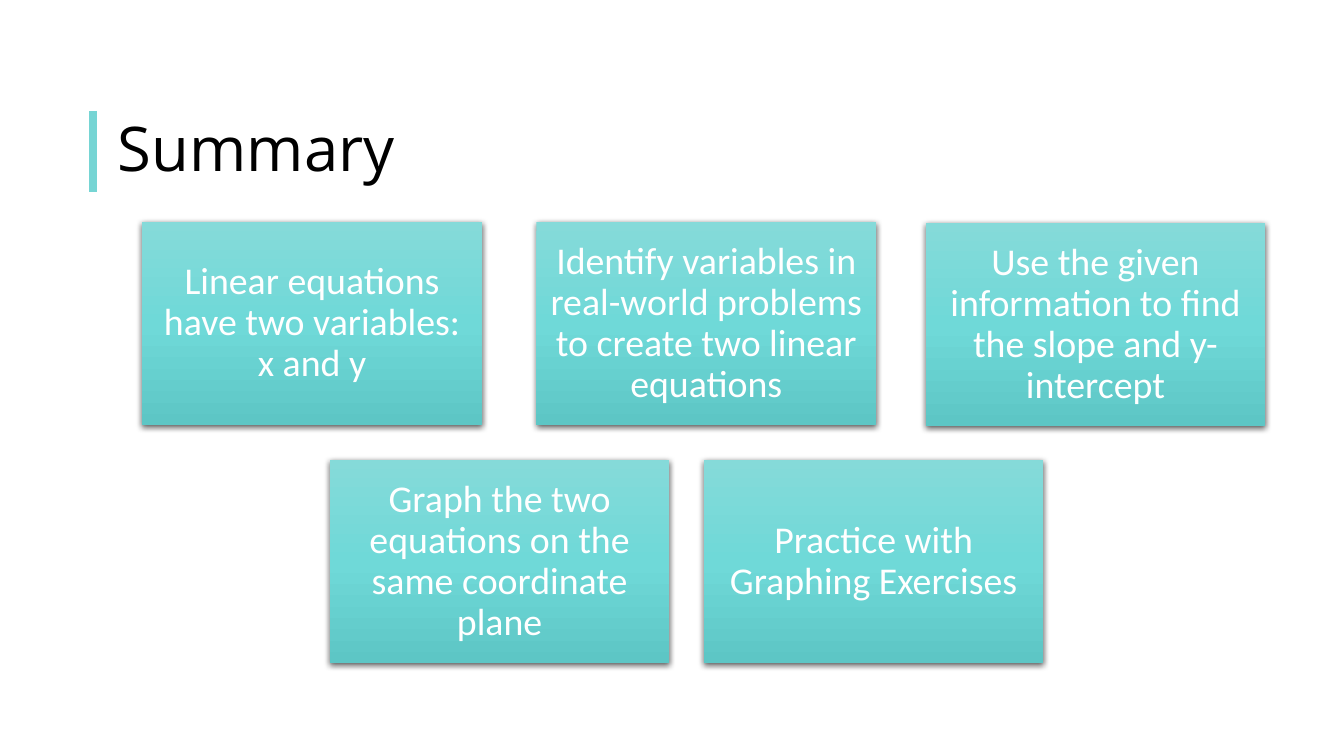
from typing import NamedTuple

from pptx import Presentation
from pptx.dml.color import RGBColor
from pptx.enum.shapes import MSO_CONNECTOR as Link, MSO_SHAPE as Kind
from pptx.enum.text import MSO_ANCHOR as Anchor, MSO_AUTO_SIZE as Fit, PP_ALIGN as Align
from pptx.oxml import parse_xml
from pptx.oxml.ns import nsdecls, qn
from pptx.slide import Slide
from pptx.text.text import Font
from pptx.util import Inches, Pt

TEAL = "76D5D4"
WHITE = "FFFFFF"
BLACK = "000000"
STOPS = {0: "85DAD9", 50: "6FD9D8", 100: "5DC6C5"}
CARD_W, CARD_H = 3.37, 2.02
INSET = 0.11


class Card(NamedTuple):
    left: float
    top: float
    text: str


CARDS = [
    Card(1.41, 2.2, "Linear equations have two variables: x and y"),
    Card(5.32, 2.2, "Identify variables in real-world problems to create two linear equations"),
    Card(9.18, 2.21, "Use the given information to find the slope and y-intercept"),
    Card(3.27, 4.56, "Graph the two equations on the same coordinate plane"),
    Card(6.98, 4.56, "Practice with Graphing Exercises"),
]


def color(code: str) -> RGBColor:
    return RGBColor.from_string(code)


def style(font: Font, name: str, size: float, code: str) -> None:
    font.name = name
    font.size = Pt(size)
    font.color.rgb = color(code)


def add_title(slide: Slide, text: str) -> None:
    title = slide.shapes.title
    title.left, title.top = Inches(1.07), Inches(1.1)
    title.width, title.height = Inches(11.5), Inches(0.8)
    frame = title.text_frame
    frame.text = text
    frame.auto_size = Fit.NONE
    frame.vertical_anchor = Anchor.MIDDLE
    para = frame.paragraphs[0]
    para.alignment = Align.LEFT
    para.line_spacing = 0.9
    style(para.font, "Open Sans", 44, BLACK)


def add_bar(slide: Slide) -> None:
    bar = slide.shapes.add_connector(
        Link.STRAIGHT, Inches(0.92), Inches(1.1), Inches(0.92), Inches(1.9))
    bar.line.color.rgb = color(TEAL)
    bar.line.width = Pt(6)
    bar._element.spPr.append(parse_xml(f"<a:effectLst {nsdecls('a')}/>"))


def add_card(slide: Slide, card: Card) -> None:
    shape = slide.shapes.add_shape(
        Kind.RECTANGLE, Inches(card.left), Inches(card.top), Inches(CARD_W), Inches(CARD_H))
    shape.line.fill.background()
    shape.fill.gradient()
    shape.fill.gradient_angle = 270
    props = shape._element.spPr
    grad = props.find(qn("a:gradFill"))
    stops = "".join(
        f'<a:gs pos="{pos * 1000}"><a:srgbClr val="{code}"/></a:gs>'
        for pos, code in STOPS.items())
    grad.replace(grad.find(qn("a:gsLst")),
                 parse_xml(f"<a:gsLst {nsdecls('a')}>{stops}</a:gsLst>"))

    shape.shadow.inherit = False
    props.find(qn("a:effectLst")).append(parse_xml(
        f'<a:outerShdw {nsdecls("a")} blurRad="{Pt(4.5)}" dist="{Pt(1.5)}" dir="5400000"'
        f' algn="ctr" rotWithShape="0"><a:srgbClr val="{BLACK}">'
        '<a:alpha val="63000"/></a:srgbClr></a:outerShdw>'))

    frame = shape.text_frame
    frame.text = card.text
    frame.word_wrap = True
    frame.vertical_anchor = Anchor.MIDDLE
    frame.margin_left = frame.margin_right = Inches(INSET)
    frame.margin_top = frame.margin_bottom = Inches(INSET)
    para = frame.paragraphs[0]
    para.alignment = Align.CENTER
    para.line_spacing = 0.9
    style(para.font, "Calibri", 27, WHITE)


def main() -> None:
    deck = Presentation()
    deck.slide_width, deck.slide_height = Inches(13.33), Inches(7.5)
    slide = deck.slides.add_slide(deck.slide_layouts.get_by_name("Title Only"))
    add_bar(slide)
    add_title(slide, "Summary")
    for card in CARDS:
        add_card(slide, card)
    deck.save("out.pptx")


if __name__ == "__main__":
    main()
